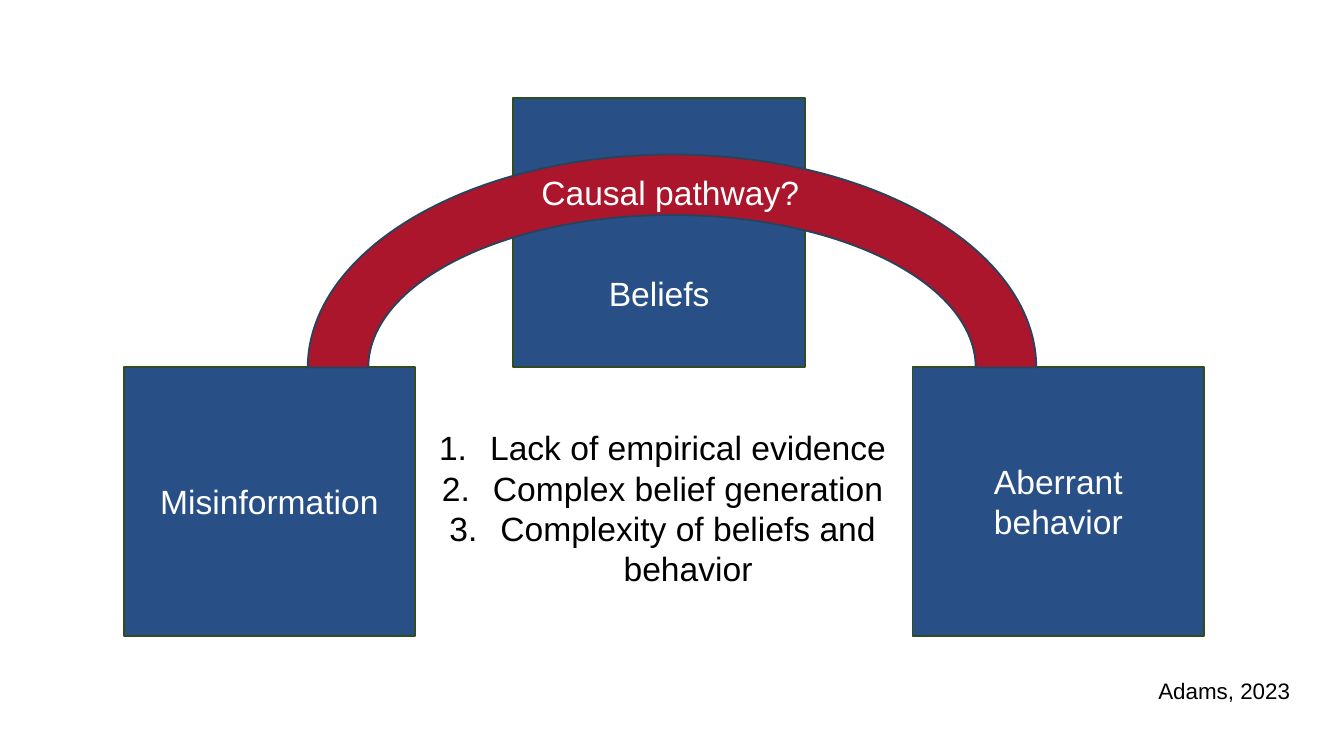
from lxml import etree
from pptx import Presentation
from pptx import util as u
from pptx.dml.color import RGBColor
from pptx.enum import shapes, text
from pptx.oxml.ns import qn

COLORS = {
    "box": "285087",
    "box_line": "314C1F",
    "arc": "AC162C",
    "arc_line": "28445D",
    "light": "FFFFFF",
    "dark": "000000",
}
BOX_WIDTH, BOX_HEIGHT = 2.17, 2


def rgb(name):
    return RGBColor.from_string(COLORS[name])


def style_font(paragraph, size, color):
    paragraph.font.name = "Arial"
    paragraph.font.size = u.Pt(size)
    paragraph.font.color.rgb = rgb(color)


def add_filled(slide, preset, place, fill, line):
    shape = slide.shapes.add_shape(preset, *map(u.Inches, place))
    shape.shadow.inherit = False
    shape.fill.solid()
    shape.fill.fore_color.rgb = rgb(fill)
    shape.line.color.rgb = rgb(line)
    shape.line.width = u.Pt(1)
    return shape


def add_stage(slide, label, left, top, top_inset=0.05):
    stage = add_filled(slide, shapes.MSO_SHAPE.RECTANGLE,
                       (left, top, BOX_WIDTH, BOX_HEIGHT), "box", "box_line")
    frame = stage.text_frame
    frame.word_wrap = True
    frame.vertical_anchor = text.MSO_ANCHOR.MIDDLE
    frame.margin_top = u.Inches(top_inset)
    paragraph = frame.paragraphs[0]
    paragraph.text = label
    paragraph.alignment = text.PP_ALIGN.CENTER
    style_font(paragraph, 18, "light")


def add_pathway(slide):
    pathway = add_filled(slide, shapes.MSO_SHAPE.BLOCK_ARC,
                         (2.29, 1.15, 5.42, 3.17), "arc", "arc_line")
    for index, value in enumerate((108, 0, 0.142)):
        pathway.adjustments[index] = value


def add_label(slide, lines, place, size, color, wrap=False):
    frame = slide.shapes.add_textbox(*map(u.Inches, place)).text_frame
    frame.word_wrap = wrap
    frame.text = "\n".join(lines)
    for paragraph in frame.paragraphs:
        style_font(paragraph, size, color)
    return frame


def number_paragraph(paragraph):
    paragraph.alignment = text.PP_ALIGN.CENTER
    properties = paragraph._p.get_or_add_pPr()
    indent = u.Inches(0.38)
    properties.set("marL", str(indent))
    properties.set("indent", str(-indent))
    numbering = etree.Element(qn("a:buAutoNum"), type="arabicPeriod")
    properties.insert(0, numbering)


def add_problems(slide, problems):
    frame = add_label(slide, problems, (3.08, 3.13, 3.7, 1.31), 18, "dark",
                      wrap=True)
    for paragraph in frame.paragraphs:
        number_paragraph(paragraph)


def main():
    deck = Presentation()
    deck.slide_width = u.Inches(10)
    deck.slide_height = deck.slide_width * 9 // 16
    slide = deck.slides.add_slide(deck.slide_layouts[6])

    add_stage(slide, "Misinformation", 0.92, 2.73)
    add_stage(slide, "Beliefs", 3.82, 0.73, top_inset=0.95)
    add_stage(slide, "Aberrant behavior", 6.79, 2.73)
    add_pathway(slide)
    add_label(slide, ["Causal pathway?"], (3.93, 1.23, 2.14, 0.4), 18, "light")
    add_problems(slide, [
        "Lack of empirical evidence",
        "Complex belief generation",
        "Complexity of beliefs and behavior",
    ])
    add_label(slide, ["Adams, 2023"], (8.52, 4.99, 1.19, 0.3), 12, "dark")

    deck.save("out.pptx")


if __name__ == "__main__":
    main()
